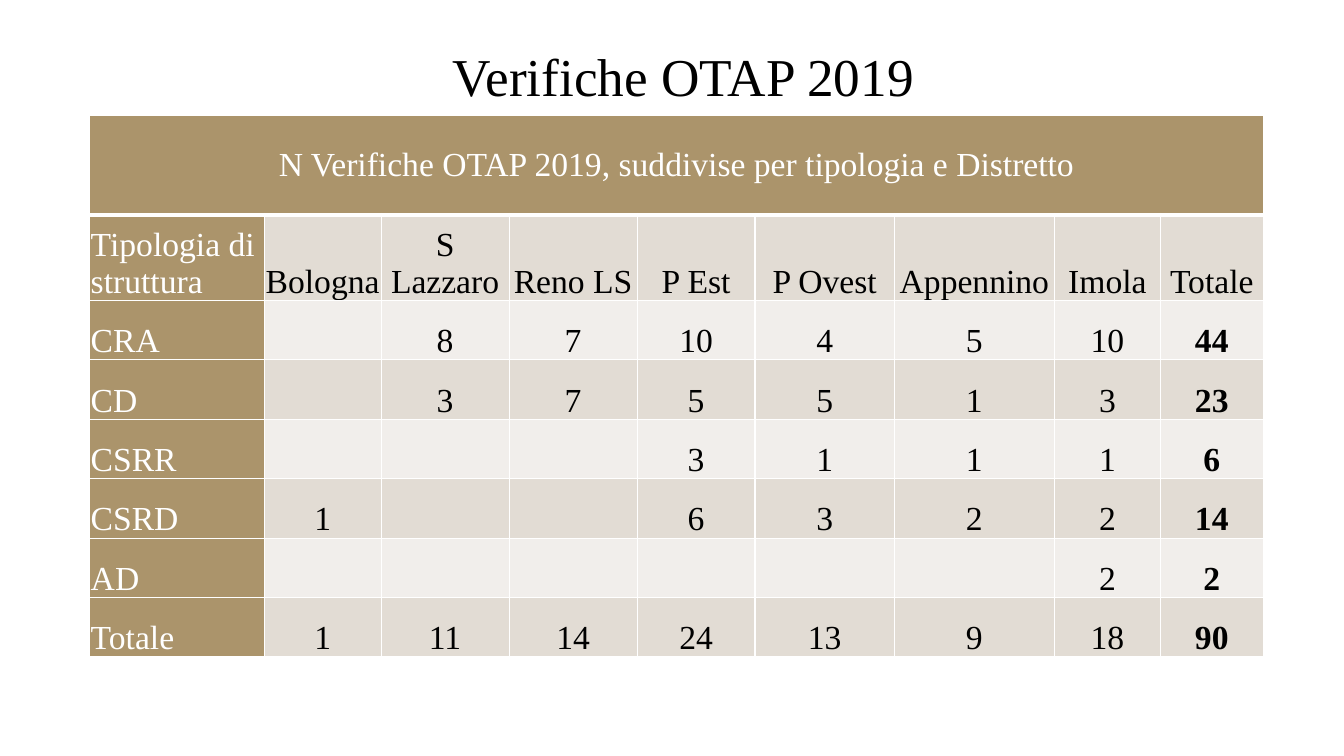
import pptx
import pptx.dml.color
import pptx.enum.text
import pptx.oxml.ns
import pptx.util
from lxml import etree
from pptx.dml.color import RGBColor
from pptx.util import Inches

FONT = "Times New Roman"
BLACK = RGBColor(0x00, 0x00, 0x00)
WHITE = RGBColor(0xFF, 0xFF, 0xFF)
BROWN = RGBColor(0xAB, 0x94, 0x6B)
BAND_DARK = RGBColor(0xE2, 0xDC, 0xD4)
BAND_LIGHT = RGBColor(0xF1, 0xEE, 0xEB)

LEFT = pptx.enum.text.PP_ALIGN.LEFT
CENTER = pptx.enum.text.PP_ALIGN.CENTER
MIDDLE = pptx.enum.text.MSO_ANCHOR.MIDDLE
BOTTOM = pptx.enum.text.MSO_ANCHOR.BOTTOM

COL_WIDTHS = [1.73, 1.16, 1.27, 1.27, 1.17, 1.38, 1.59, 1.05, 1.02]
ROW_HEIGHTS = [0.99, 0.85] + [0.59] * 6
CAPTION = "N Verifiche OTAP 2019, suddivise per tipologia e Distretto"
ROWS = [
    ["Tipologia di struttura", "Bologna", "S Lazzaro", "Reno LS", "P Est",
     "P Ovest", "Appennino", "Imola", "Totale"],
    ["CRA", "", "8", "7", "10", "4", "5", "10", "44"],
    ["CD", "", "3", "7", "5", "5", "1", "3", "23"],
    ["CSRR", "", "", "", "3", "1", "1", "1", "6"],
    ["CSRD", "1", "", "", "6", "3", "2", "2", "14"],
    ["AD", "", "", "", "", "", "", "2", "2"],
    ["Totale", "1", "11", "14", "24", "13", "9", "18", "90"],
]


def write(tf, text, size=24, color=BLACK, bold=False, align=CENTER, spacing=None):
    p = tf.paragraphs[0]
    p.alignment = align
    p.line_spacing = spacing
    r = p.add_run()
    r.text = text
    r.font.name = FONT
    r.font.size = pptx.util.Pt(size)
    r.font.bold = bold
    r.font.color.rgb = color


def set_borders(cell, top=1, bottom=1):
    """Draw white borders, with widths in points."""
    tc_pr = cell._tc.get_or_add_tcPr()
    for side, width in {"L": 1, "R": 1, "T": top, "B": bottom}.items():
        ln = etree.SubElement(tc_pr, pptx.oxml.ns.qn(f"a:ln{side}"),
                              w=str(pptx.util.Pt(width)))
        fill = etree.SubElement(ln, pptx.oxml.ns.qn("a:solidFill"))
        etree.SubElement(fill, pptx.oxml.ns.qn("a:srgbClr"), val=str(WHITE))


def format_cell(cell, fill, anchor=BOTTOM, **borders):
    set_borders(cell, **borders)
    cell.fill.solid()
    cell.fill.fore_color.rgb = fill
    cell.vertical_anchor = anchor
    cell.margin_left = cell.margin_right = cell.margin_top = Inches(0.01)
    cell.margin_bottom = 0


def add_title(slide, text):
    sp = slide.shapes.add_textbox(Inches(1.03), Inches(0.45), Inches(11.5), Inches(0.89))
    sp.text_frame.word_wrap = True
    write(sp.text_frame, text, size=38, spacing=0.9)


def add_checks_table(slide):
    table = slide.shapes.add_table(
        len(ROW_HEIGHTS), len(COL_WIDTHS), Inches(0.89), Inches(1.14),
        Inches(sum(COL_WIDTHS)), Inches(sum(ROW_HEIGHTS))).table
    for column, width in zip(table.columns, COL_WIDTHS):
        column.width = Inches(width)
    for row, height in zip(table.rows, ROW_HEIGHTS):
        row.height = Inches(height)

    for cell in table.rows[0].cells:
        format_cell(cell, BROWN, anchor=MIDDLE, bottom=3)
    caption = table.cell(0, 0)
    caption.merge(table.cell(0, len(COL_WIDTHS) - 1))
    write(caption.text_frame, CAPTION, color=WHITE)

    for i, values in enumerate(ROWS, start=1):
        band = BAND_DARK if i % 2 else BAND_LIGHT
        for j, value in enumerate(values):
            cell = table.cell(i, j)
            is_label = j == 0
            format_cell(cell, BROWN if is_label else band, top=3 if i == 1 else 1)
            if value:
                write(cell.text_frame, value,
                      color=WHITE if is_label else BLACK,
                      align=LEFT if is_label else CENTER,
                      bold=i > 1 and j == len(values) - 1)


def main():
    prs = pptx.Presentation()
    prs.slide_width = Inches(13.33)
    prs.slide_height = Inches(7.5)
    slide = prs.slides.add_slide(prs.slide_layouts[6])
    add_checks_table(slide)
    add_title(slide, "Verifiche OTAP 2019")
    prs.save("out.pptx")


if __name__ == "__main__":
    main()
